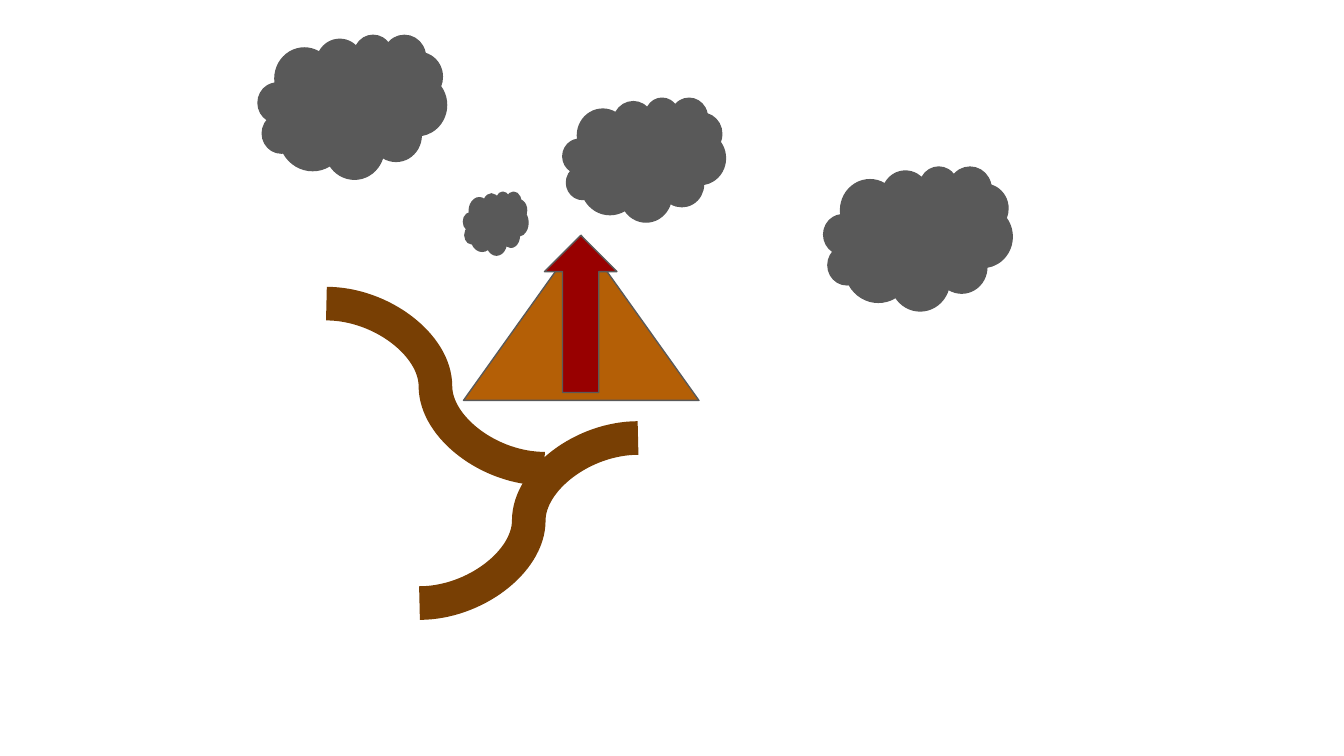
import lxml.etree
import pptx
import pptx.dml.color
import pptx.enum.shapes
import pptx.oxml.ns
import pptx.util

Cm = pptx.util.Cm
SHAPE = pptx.enum.shapes.MSO_SHAPE
COLORS = {"smoke": "595959", "rock": "B45F06", "lava": "980000", "root": "783F04"}
OUTLINE = {"width": pptx.util.Pt(0.75)}
ROOT = {"width": pptx.util.Pt(18)}


class Painter:
    def __init__(self, slide):
        self.s = slide

    def format_line(self, line, color, values):
        line.fill.solid()
        line.fill.fore_color.rgb = pptx.dml.color.RGBColor.from_string(COLORS[color])
        for name, value in values.items():
            setattr(line, name, value)

    def shape(self, kind, box, color):
        sp = self.s.shapes.add_shape(kind, *map(Cm, box))
        sp.shadow.inherit = False
        sp.fill.solid()
        sp.fill.fore_color.rgb = pptx.dml.color.RGBColor.from_string(COLORS[color])
        self.format_line(sp.line, "smoke", OUTLINE)

    def curve(self, ends):
        kind = pptx.enum.shapes.MSO_CONNECTOR.CURVE
        cxn = self.s.shapes.add_connector(kind, *map(Cm, ends))
        self.format_line(cxn.line, "root", ROOT)
        lxml.etree.SubElement(cxn._element.spPr, pptx.oxml.ns.qn("a:effectLst"))


def main():
    prs = pptx.Presentation()
    prs.slide_width, prs.slide_height = Cm(25.4), Cm(14.29)
    painter = Painter(prs.slides.add_slide(prs.slide_layouts[6]))

    for ends in ((6.17, 5.74, 10.29, 8.86), (12.06, 8.28, 7.93, 11.4)):
        painter.curve(ends)

    painter.shape(SHAPE.FLOWCHART_EXTRACT, (8.76, 4.45, 4.45, 3.12), "rock")
    clouds = (
        (10.64, 1.85, 3.07, 2.34),
        (8.76, 3.63, 1.22, 1.19),
        (4.88, 0.66, 3.56, 2.72),
        (15.57, 3.15, 3.56, 2.72),
    )
    for box in clouds:
        painter.shape(SHAPE.CLOUD, box, "smoke")
    painter.shape(SHAPE.UP_ARROW, (10.29, 4.45, 1.37, 2.97), "lava")

    prs.save("out.pptx")


if __name__ == "__main__":
    main()
